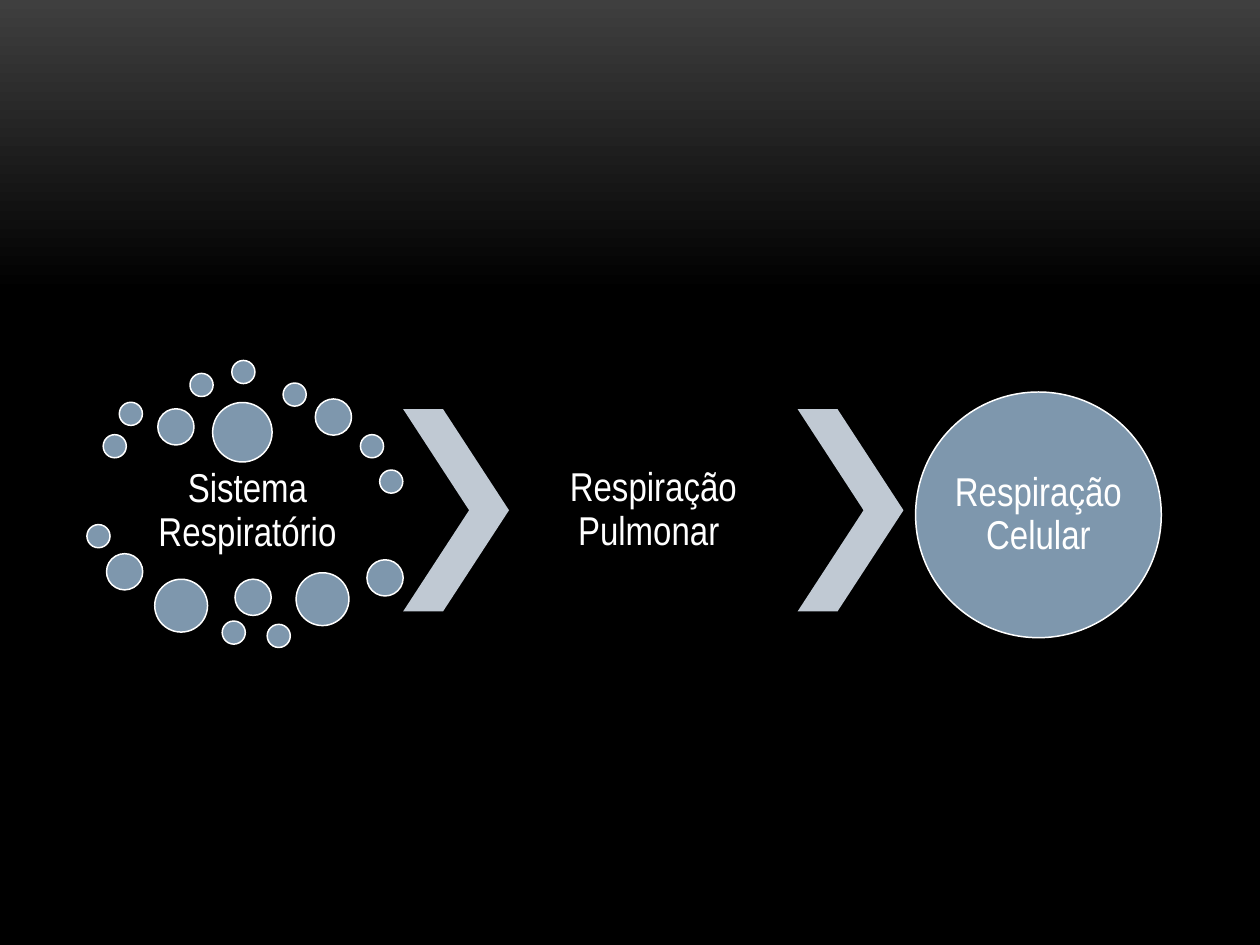
from pptx import Presentation
from pptx.dml.color import RGBColor
from pptx.enum.shapes import MSO_SHAPE
from pptx.enum.text import MSO_ANCHOR, PP_ALIGN
from pptx.util import Pt

OVAL, CHEVRON = MSO_SHAPE.OVAL, MSO_SHAPE.CHEVRON
MIDDLE, CENTER = MSO_ANCHOR.MIDDLE, PP_ALIGN.CENTER
COLORS = {"top": "3F3F3F", "black": "000000", "circle": "7E97AD",
          "chevron": "C0C9D3", "white": "FFFFFF"}


def add_text(text, x, y, w, h, inset=2.2, size=23, font="Arial Narrow", color="white"):
    tf = s.shapes.add_textbox(Pt(x), Pt(y), Pt(w), Pt(h)).text_frame
    tf.word_wrap = True
    tf.vertical_anchor = MIDDLE
    tf.margin_left = tf.margin_right = tf.margin_top = tf.margin_bottom = Pt(inset)
    p = tf.paragraphs[0]
    p.alignment = CENTER
    p.line_spacing = 0.9
    r = p.add_run()
    r.text = text
    r.font.size = Pt(size)
    r.font.name = font
    r.font.color.rgb = RGBColor.from_string(COLORS[color])


def add_figure(kind, x, y, w, h, fill, line=None):
    sp = s.shapes.add_shape(kind, Pt(x), Pt(y), Pt(w), Pt(h))
    sp.shadow.inherit = False
    sp.fill.solid()
    sp.fill.fore_color.rgb = RGBColor.from_string(COLORS[fill])
    if line:
        sp.line.color.rgb = RGBColor.from_string(COLORS[line])
        sp.line.width = Pt(0.85)
    else:
        sp.line.fill.background()
    return sp


prs = Presentation()
prs.slide_width, prs.slide_height = Pt(720), Pt(540)
s = prs.slides.add_slide(prs.slide_layouts[6])

# Background: dark grey fading down to black
bg = s.background.fill
bg.gradient()
bg.gradient_angle = 270
for stop, position, color in zip(bg.gradient_stops, (0, 0.31), ("top", "black")):
    stop.position = position
    stop.color.rgb = RGBColor.from_string(COLORS[color])

# First stage: text in a ring of bubbles (left, top, diameter)
add_text("Sistema Respiratório", 59, 265, 165, 54.7)
S, M, L, XL = 13.2, 20.7, 30.2, 34
bubbles = [
    (59, 248.4, S), (68.2, 229.9, S), (90.2, 233.6, M), (108.6, 213.4, S),
    (132.5, 206, S), (161.8, 218.9, S), (180.2, 228, M), (206, 248.4, S),
    (217, 268.6, S), (121.5, 230, XL), (49.7, 299.8, S), (60.9, 316.4, M),
    (88.4, 331, L), (127, 354.9, S), (134.3, 331, M), (152.7, 356.8, S),
    (169.2, 327.3, L), (209.7, 319.9, M),
]
for x, y, d in bubbles:
    add_figure(OVAL, x, y, d, d, "circle", "white")

# Chevrons between the stages
for x in (230.4, 455.8):
    chevron = add_figure(CHEVRON, x, 233.8, 60.5, 115.6, "chevron")
    chevron.adjustments[0] = 0.623

# Second stage
add_text("Respiração Pulmonar ", 290.9, 233.8, 165, 115.6)

# Third stage: text on a large circle
add_figure(OVAL, 523.2, 224, 140.4, 140.4, "circle", "white")
add_text("Respiração Celular", 543.7, 244.6, 99.4, 99.4, inset=0)

prs.save("out.pptx")
